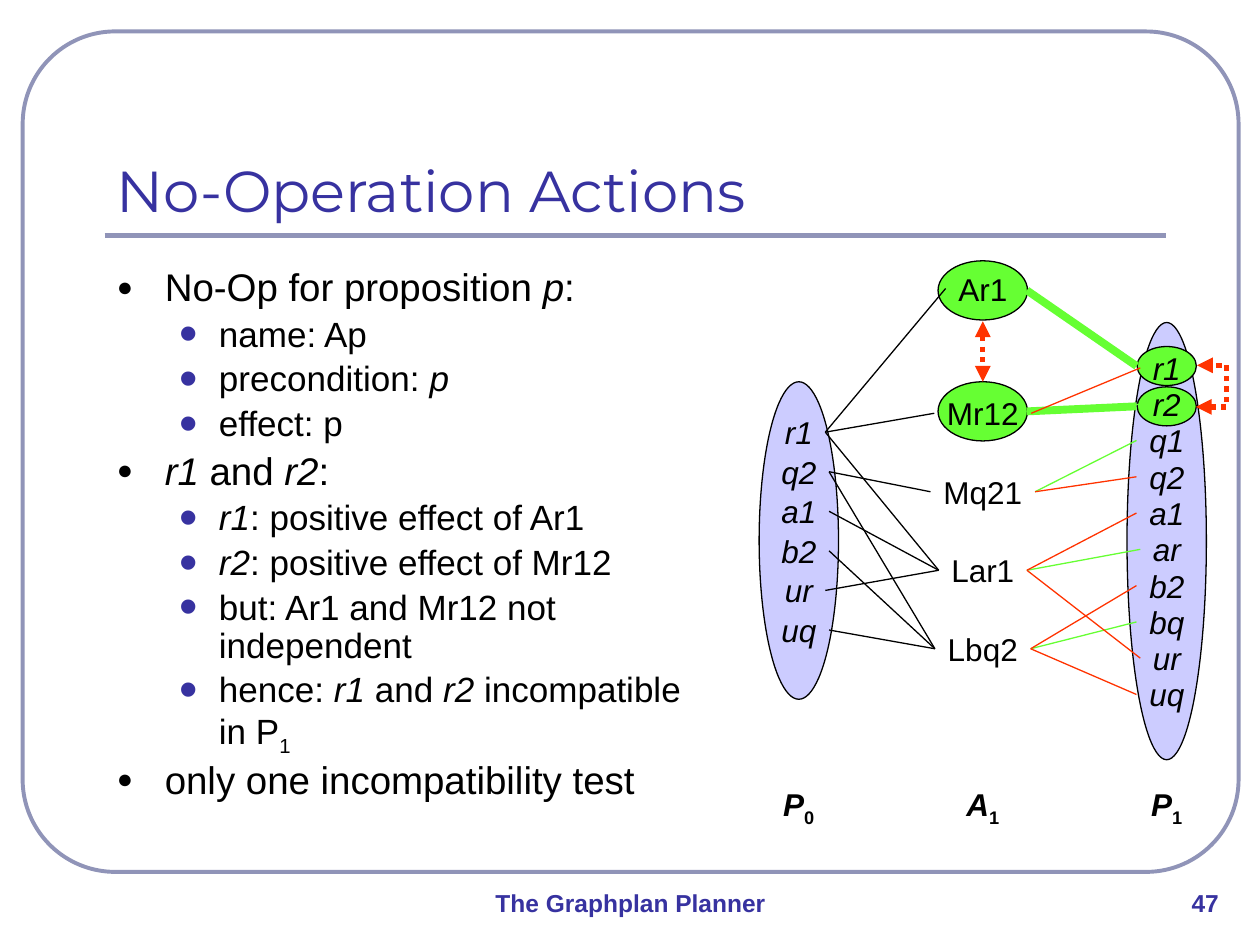
import pptx
import pptx.dml.color
import pptx.enum.dml
import pptx.enum.shapes
import pptx.enum.text
import pptx.oxml.ns
import pptx.util
from lxml import etree

SHAPES = pptx.enum.shapes.MSO_SHAPE
CONNECTORS = pptx.enum.shapes.MSO_CONNECTOR
ALIGN = pptx.enum.text.PP_ALIGN
ANCHOR = pptx.enum.text.MSO_ANCHOR
INK, INDIGO, FRAME = "000000", "3732A0", "9094B8"
LILAC, GREEN, RED = "CCCCFF", "66FF33", "FF3300"


def color(value):
    return pptx.dml.color.RGBColor.from_string(value)


def add_tag(parent, tag, **attributes):
    return etree.SubElement(parent, pptx.oxml.ns.qn(tag), attributes)


class Canvas:
    """Draws styled elements on one slide, measured in a grid of 100 columns by 75 rows."""

    font = "Arial"
    bullets = (("●", INK, "70000", 22, 0.38, 0.38), ("•", INDIGO, "150000", 20, 0.81, 0.31))

    def __init__(self, presentation):
        self.slide = presentation.slides.add_slide(presentation.slide_layouts[6])
        self.column = presentation.slide_width / 100
        self.row = presentation.slide_height / 75

    def place(self, x, y):
        return round(x * self.column), round(y * self.row)

    def shape(self, kind, left, top, width, height, fill=None, line=INK, weight=0.75):
        shape = self.slide.shapes.add_shape(
            kind, *self.place(left, top), *self.place(width, height))
        shape.shadow.inherit = False
        if fill:
            shape.fill.solid()
            shape.fill.fore_color.rgb = color(fill)
        else:
            shape.fill.background()
        shape.line.color.rgb = color(line)
        shape.line.width = pptx.util.Pt(weight)
        return shape

    def oval(self, x, y, width, height, fill):
        self.shape(SHAPES.OVAL, x - width / 2, y - height / 2, width, height, fill)

    def line(self, start, end, line=INK, weight=0.75, kind=CONNECTORS.STRAIGHT):
        connector = self.slide.shapes.add_connector(
            kind, *self.place(*start), *self.place(*end))
        connector.line.color.rgb = color(line)
        connector.line.width = pptx.util.Pt(weight)
        add_tag(connector._element.spPr, "a:effectLst")
        return connector

    def conflict(self, start, end, kind=CONNECTORS.STRAIGHT):
        connector = self.line(start, end, RED, 3, kind)
        connector.line.dash_style = pptx.enum.dml.MSO_LINE.ROUND_DOT
        outline = connector.line._get_or_add_ln()
        for tag in ("a:headEnd", "a:tailEnd"):
            add_tag(outline, tag, type="triangle")
        return connector

    def runs(self, paragraph, runs, size, ink=INK, font=None):
        for text, style in runs:
            run = paragraph.add_run()
            run.text = text
            run.font.name = font or self.font
            run.font.size = pptx.util.Pt(size)
            run.font.color.rgb = color(ink)
            run.font.bold = "b" in style
            run.font.italic = "i" in style
            if "s" in style:
                run._r.get_or_add_rPr().set("baseline", "-25000")

    def frame(self, left, top, width, height):
        box = self.slide.shapes.add_textbox(
            *self.place(left, top), *self.place(width, height))
        box.text_frame.word_wrap = True
        return box.text_frame

    def text(self, left, top, width, height, runs, size, ink=INK, font=None,
             align=ALIGN.CENTER, anchor=ANCHOR.TOP):
        frame = self.frame(left, top, width, height)
        frame.vertical_anchor = anchor
        frame.paragraphs[0].alignment = align
        self.runs(frame.paragraphs[0], runs, size, ink, font)
        return frame

    def label(self, x, y, width, runs):
        frame = self.text(x - width / 2, y - 2, width, 4, runs, 18)
        frame.word_wrap = False
        frame.auto_size = pptx.enum.text.MSO_AUTO_SIZE.SHAPE_TO_FIT_TEXT

    def outline(self, left, top, width, height, items):
        frame = self.frame(left, top, width, height)
        for index, (level, runs) in enumerate(items):
            paragraph = frame.add_paragraph() if index else frame.paragraphs[0]
            mark, ink, scale, size, margin, hang = self.bullets[level]
            paragraph.level = level
            paragraph.line_spacing = 0.9
            paragraph.space_before = pptx.util.Pt(size * 0.2)
            properties = paragraph._p.get_or_add_pPr()
            properties.set("marL", str(pptx.util.Inches(margin)))
            properties.set("indent", str(-pptx.util.Inches(hang)))
            add_tag(add_tag(properties, "a:buClr"), "a:srgbClr", val=ink)
            add_tag(properties, "a:buSzPct", val=scale)
            add_tag(properties, "a:buFont", typeface=self.font)
            add_tag(properties, "a:buChar", char=mark)
            self.runs(paragraph, runs, size)


BODY = [
    (0, [("No-Op for proposition ", ""), ("p", "i"), (":", "")]),
    (1, [("name: Ap", "")]),
    (1, [("precondition: ", ""), ("p", "i")]),
    (1, [("effect: p", "")]),
    (0, [("r1", "i"), (" and ", ""), ("r2", "i"), (":", "")]),
    (1, [("r1", "i"), (": positive effect of Ar1", "")]),
    (1, [("r2", "i"), (": positive effect of Mr12", "")]),
    (1, [("but: Ar1 and Mr12 not independent", "")]),
    (1, [("hence: ", ""), ("r1", "i"), (" and ", ""), ("r2", "i"),
         (" incompatible in P", ""), ("1", "s")]),
    (0, [("only one incompatibility test", "")]),
]
BEFORE_X, ACTION_X, AFTER_X = 63.4, 78, 92.6
ACTION_WIDTHS = {"Ar1": 5.9, "Mr12": 7.7, "Mq21": 8.3, "Lar1": 7, "Lbq2": 7.6}
PRECONDITIONS = {"Ar1": ["r1"], "Mr12": ["r1"], "Mq21": ["q2"],
                 "Lar1": ["r1", "a1", "ur"], "Lbq2": ["q2", "b2", "uq"]}
ADDED = {"Mr12": ["r2"], "Mq21": ["q1"], "Lar1": ["ar"], "Lbq2": ["bq"]}
DELETED = {"Mr12": ["r1"], "Mq21": ["q2"], "Lar1": ["a1", "ur"], "Lbq2": ["b2", "uq"]}


def proposition_nodes(names, x, top, step):
    return {name: (x, top + step * index, 4.2 if "r" in name else 4.8)
            for index, name in enumerate(names.split())}


def link(canvas, source, target, line=INK):
    canvas.line((source[0] + source[2] / 2, source[1]),
                (target[0] - target[2] / 2, target[1]), line)


def main():
    presentation = pptx.Presentation()
    presentation.slide_width = pptx.util.Inches(10)
    presentation.slide_height = pptx.util.Inches(7.5)
    canvas = Canvas(presentation)

    border = canvas.shape(SHAPES.ROUNDED_RECTANGLE, 1.8, 2.5, 96.5, 66.7, None, FRAME, 2.25)
    border.adjustments[0] = 0.11
    canvas.line((8.3, 18.7), (92.5, 18.7), FRAME, 3)
    canvas.text(8.3, 5.8, 84.2, 12.5, [("No-Operation Actions", "")], 33, INDIGO,
                "Montserrat", ALIGN.LEFT, ANCHOR.BOTTOM)
    canvas.outline(8.3, 20.8, 48, 44.2, BODY)
    canvas.text(26.4, 70, 47.3, 5, [("The Graphplan Planner", "b")], 14, INDIGO)
    canvas.text(91.7, 70, 7.9, 5, [("47", "b")], 14, INDIGO)

    before = proposition_nodes("r1 q2 a1 b2 ur uq", BEFORE_X, 34.3, 3.14)
    after = proposition_nodes("r1 r2 q1 q2 a1 ar b2 bq ur uq", AFTER_X, 29.2, 2.88)
    actions = {name: (ACTION_X, 26.57 + 6.23 * index if index else 22.9, width)
               for index, (name, width) in enumerate(ACTION_WIDTHS.items())}

    link(canvas, actions["Ar1"], after["r1"], GREEN)
    canvas.oval(BEFORE_X, 42.9, 6.3, 25.2, LILAC)
    canvas.oval(AFTER_X, 42.95, 6.3, 34.7, LILAC)
    for action_y, effect_y in ((23.05, 29.05), (32.65, 32.25)):
        canvas.oval(AFTER_X, effect_y, 4.7, 3.1, GREEN)
        canvas.oval(ACTION_X, action_y, 7.1, 4.7, GREEN)
        canvas.line((81.5, action_y), (90.2, effect_y), GREEN, 4.5)

    for nodes, style in ((before, "i"), (actions, ""), (after, "i")):
        for name, node in nodes.items():
            canvas.label(*node, [(name, style)])
    for x, letter, number in ((BEFORE_X, "P", "0"), (ACTION_X, "A", "1"), (AFTER_X, "P", "1")):
        canvas.label(x, 63.8, 4.6, [(letter, "bi"), (number, "bs")])

    for action, names in PRECONDITIONS.items():
        for name in names:
            link(canvas, before[name], actions[action])
    for effects, line in ((ADDED, GREEN), (DELETED, RED)):
        for action, names in effects.items():
            for name in names:
                link(canvas, actions[action], after[name], line)

    canvas.conflict((ACTION_X, 25.5), (ACTION_X, 30.3))
    bracket = canvas.conflict((94.9, 32.3), (95, 29), CONNECTORS.ELBOW)
    guides = bracket._element.spPr.prstGeom.get_or_add_avLst()
    add_tag(guides, "a:gd", name="adj1", fmla="val 2500000")
    presentation.save("out.pptx")


if __name__ == "__main__":
    main()
